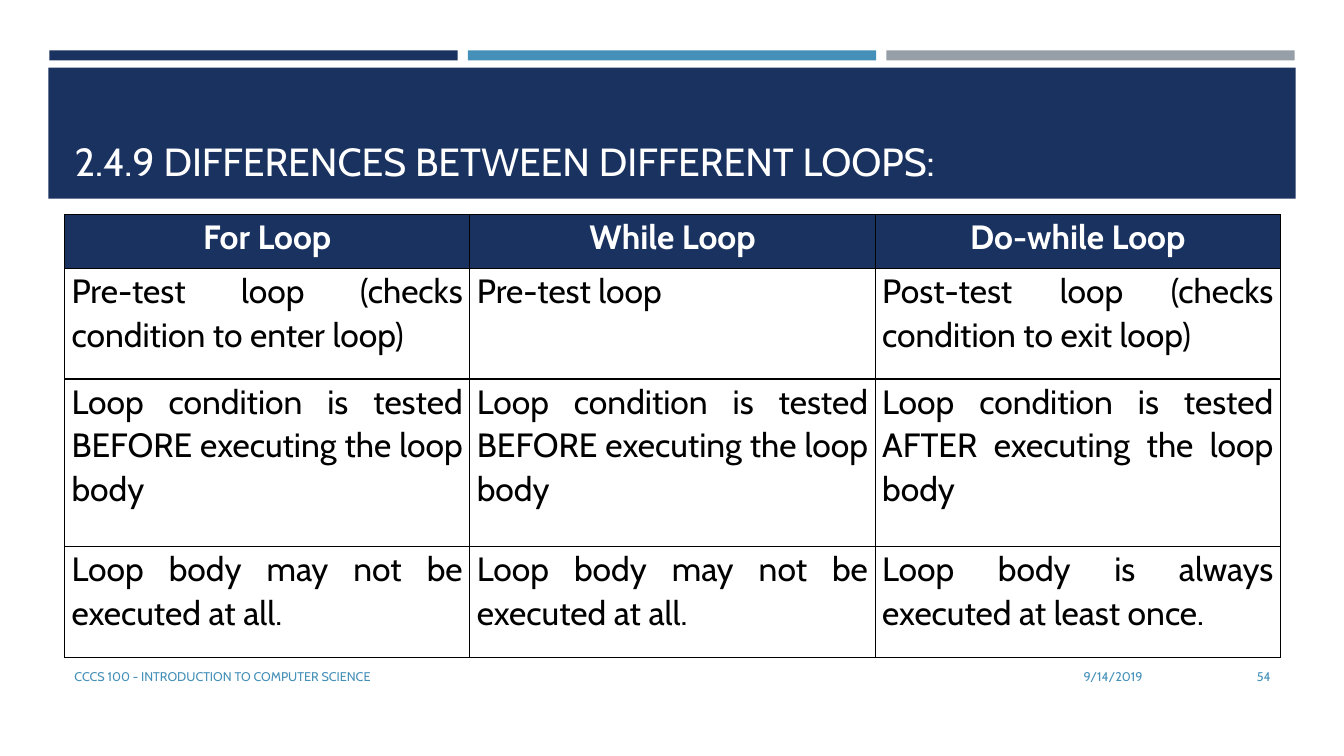
from lxml import etree
from pptx import Presentation
from pptx.dml.color import RGBColor
from pptx.enum.shapes import MSO_SHAPE
from pptx.enum.text import MSO_ANCHOR, MSO_AUTO_SIZE, PP_ALIGN
from pptx.oxml.ns import qn
from pptx.util import Pt

RECT = MSO_SHAPE.RECTANGLE
LEFT, RIGHT, MID, JUST = PP_ALIGN.LEFT, PP_ALIGN.RIGHT, PP_ALIGN.CENTER, PP_ALIGN.JUSTIFY
BOTTOM, CENTER = MSO_ANCHOR.BOTTOM, MSO_ANCHOR.MIDDLE
NO_FIT = MSO_AUTO_SIZE.NONE
NAVY, BLUE, GRAY, WHITE, BLACK = "1A3260", "4590B8", "969FA7", "FFFFFF", "000000"
SCALE = 9144

HEADS = ["For Loop", "While Loop", "Do-while Loop"]
BEFORE = "Loop condition is tested BEFORE executing the loop body"
NEVER = "Loop body may not be executed at all."
ROWS = [
    HEADS,
    ["Pre-test loop (checks condition to enter loop)", "Pre-test loop",
     "Post-test loop (checks condition to exit loop)"],
    [BEFORE, BEFORE, "Loop condition is tested AFTER executing the loop body"],
    [NEVER, NEVER, "Loop body is always executed at least once."],
]


def px(n):
    return int(n * SCALE)


def color(code):
    return RGBColor.from_string(code)


def apply(target, values):
    for name, value in values.items():
        setattr(target, name, value)


class Deck:
    font = "Cabin"

    def __init__(self, wide, high):
        self.file = Presentation()
        apply(self.file, {"slide_width": px(wide), "slide_height": px(high)})
        self.slide = self.file.slides.add_slide(self.file.slide_layouts[5])

    def label(self, frame, text, size, ink, align=LEFT, bold=False, space=1.0):
        para = frame.paragraphs[0]
        para.text = text
        apply(para, {"alignment": align, "line_spacing": space})
        apply(para.font, {"name": self.font, "size": Pt(size), "bold": bold})
        para.font.color.rgb = color(ink)

    def bar(self, x, y, w, h, fill):
        shape = self.slide.shapes.add_shape(RECT, px(x), px(y), px(w), px(h))
        shape.shadow.inherit = False
        shape.fill.solid()
        shape.fill.fore_color.rgb = color(fill)
        shape.line.fill.background()

    def title(self, x, y, w, h, text):
        shape = self.slide.shapes.title
        apply(shape, {"left": px(x), "top": px(y), "width": px(w), "height": px(h)})
        apply(shape.text_frame, {"word_wrap": True, "auto_size": NO_FIT,
                                 "vertical_anchor": BOTTOM})
        self.label(shape.text_frame, text, 28, WHITE)
        shape._element.getparent().append(shape._element)

    def note(self, x, y, w, h, text, align=LEFT):
        frame = self.slide.shapes.add_textbox(px(x), px(y), px(w), px(h)).text_frame
        apply(frame, {"word_wrap": True, "vertical_anchor": CENTER})
        self.label(frame, text, 9, BLUE, align)

    def border(self, cell):
        props = cell._tc.get_or_add_tcPr()
        for side in ("lnL", "lnR", "lnT", "lnB"):
            line = etree.SubElement(props, qn(f"a:{side}"), w=str(Pt(1)))
            fill = etree.SubElement(line, qn("a:solidFill"))
            etree.SubElement(fill, qn("a:srgbClr"), val=BLACK)

    def table(self, x, y, w, highs, rows):
        cols = len(rows[0])
        table = self.slide.shapes.add_table(
            len(rows), cols, px(x), px(y), px(w), px(sum(highs))).table
        table.horz_banding = False
        for col in table.columns:
            col.width = px(w // cols)
        for i, (row, high) in enumerate(zip(rows, highs)):
            table.rows[i].height = px(high)
            head = i == 0
            for j, text in enumerate(row):
                cell = table.cell(i, j)
                apply(cell, {"margin_left": px(7), "margin_right": px(7),
                             "margin_top": 0, "margin_bottom": 0})
                self.border(cell)
                cell.fill.solid()
                cell.fill.fore_color.rgb = color(NAVY if head else WHITE)
                self.label(cell.text_frame, text, 24, WHITE if head else BLACK,
                           MID if head else JUST, head, 1.07)


def main():
    deck = Deck(1333, 750)
    for i, fill in enumerate([NAVY, BLUE, GRAY]):
        deck.bar(49 + 415 * i, 50, 405, 10, fill)
    deck.bar(48, 67, 1237, 130, NAVY)
    deck.title(64, 77, 1206, 111, "2.4.9 DIFFERENCES BETWEEN DIFFERENT LOOPS:")
    deck.table(64, 213, 1206, [53, 110, 166, 110], ROWS)
    deck.note(832, 651, 311, 40, "9/14/2019", RIGHT)
    deck.note(64, 651, 756, 40, "CCCS 100 - INTRODUCTION TO COMPUTER SCIENCE")
    deck.note(1155, 651, 115, 40, "54", RIGHT)
    deck.file.save("out.pptx")


if __name__ == "__main__":
    main()
